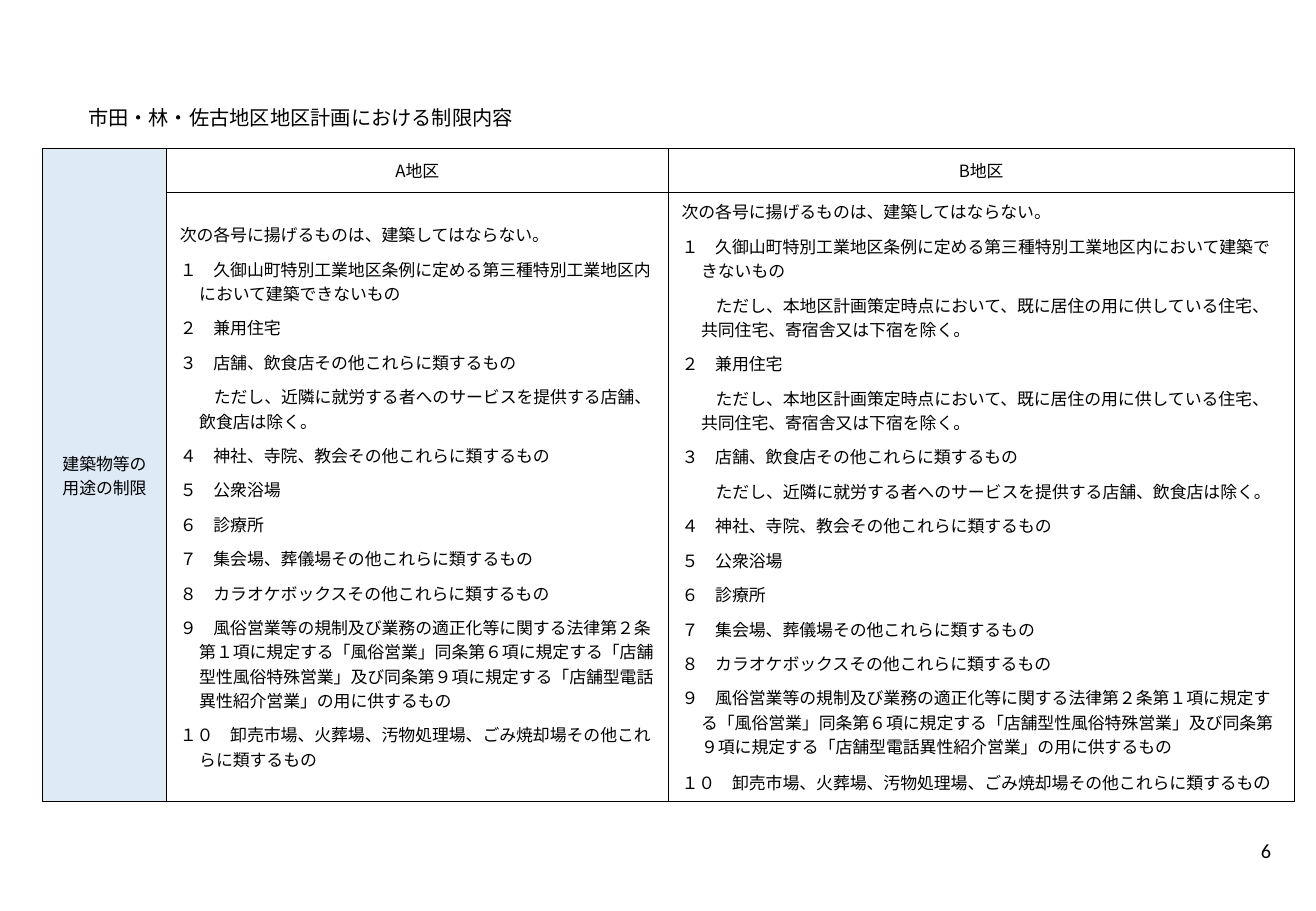
from lxml.etree import SubElement
from pptx import Presentation
from pptx.dml.color import RGBColor as RGB
from pptx.enum.lang import MSO_LANGUAGE_ID as LANG
from pptx.enum.text import MSO_ANCHOR as ANCHOR, MSO_AUTO_SIZE as FIT, PP_ALIGN as ALIGN
from pptx.oxml import parse_xml
from pptx.oxml.ns import nsdecls, qn
from pptx.util import Inches, Pt

COLORS = {"ink": "000000", "head": "DEEBF7", "paper": "FFFFFF"}
CJK = "Noto Sans CJK JP"
HANG = (0.16, -0.16)
NOTE = (0.16, 0.12)

LEAD = "次の各号に揚げるものは、建築してはならない。"
USES = [
    "１　久御山町特別工業地区条例に定める第三種特別工業地区内において建築できないもの",
    "２　兼用住宅",
    "３　店舗、飲食店その他これらに類するもの",
    "４　神社、寺院、教会その他これらに類するもの",
    "５　公衆浴場",
    "６　診療所",
    "７　集会場、葬儀場その他これらに類するもの",
    "８　カラオケボックスその他これらに類するもの",
    "９　風俗営業等の規制及び業務の適正化等に関する法律第２条第１項に規定する「風俗営業」"
    "同条第６項に規定する「店舗型性風俗特殊営業」及び同条第９項に規定する"
    "「店舗型電話異性紹介営業」の用に供するもの",
    "１０　卸売市場、火葬場、汚物処理場、ごみ焼却場その他これらに類するもの",
]
SHOPS = "ただし、近隣に就労する者へのサービスを提供する店舗、飲食店は除く。"
HOMES = "ただし、本地区計画策定時点において、既に居住の用に供している住宅、共同住宅、寄宿舎又は下宿を除く。"
ZONES = [("A地区", {2: SHOPS}), ("B地区", {0: HOMES, 1: HOMES, 2: SHOPS})]


class Page:
    def __init__(self, deck):
        self.slide = deck.slides.add_slide(deck.slide_layouts[5])

    def run(self, para, text, size, face=CJK):
        run = para.add_run()
        run.text = text
        font = run.font
        font.name = face
        font.size = Pt(size)
        font.language_id = LANG.JAPANESE
        font.color.rgb = RGB.from_string(COLORS["ink"])
        SubElement(font._element, qn("a:ea"), typeface=face)
        return run

    def place(self, shape, box, anchor):
        shape.left, shape.top, shape.width, shape.height = map(Inches, box)
        frame = shape.text_frame
        frame.word_wrap = True
        frame.auto_size = FIT.NONE
        frame.vertical_anchor = anchor
        return frame.paragraphs[0]

    def title(self, text, box):
        para = self.place(self.slide.shapes.title, box, ANCHOR.TOP)
        para.alignment = ALIGN.CENTER
        para.line_spacing = 1.5
        self.run(para, text, 12)

    def number(self, text, box):
        shape = self.slide.shapes.add_textbox(*map(Inches, box))
        para = self.place(shape, box, ANCHOR.MIDDLE)
        para.alignment = ALIGN.RIGHT
        self.run(para, text, 12, "Calibri")

    def table(self, box, cols, rows):
        grid = self.slide.shapes.add_table(len(rows), len(cols), *map(Inches, box)).table
        grid.first_row = grid.horz_banding = False
        for col, width in zip(grid.columns, cols):
            col.width = Inches(width)
        for row, height in zip(grid.rows, rows):
            row.height = Inches(height)
        for cell in grid.iter_cells():
            self.style(cell)
        return grid

    def style(self, cell):
        cell.vertical_anchor = ANCHOR.MIDDLE
        cell.margin_left = cell.margin_right = Inches(0.11)
        cell.margin_top = cell.margin_bottom = Inches(0.05)
        self.fill(cell, "paper")
        props = cell._tc.get_or_add_tcPr()
        for spot, side in enumerate("LRTB"):
            props.insert(spot, parse_xml(
                f'<a:ln{side} {nsdecls("a")} w="{Pt(0.5)}"><a:solidFill>'
                f'<a:srgbClr val="{COLORS["ink"]}"/></a:solidFill></a:ln{side}>'))

    def fill(self, cell, color):
        cell.fill.solid()
        cell.fill.fore_color.rgb = RGB.from_string(COLORS[color])

    def lines(self, cell, items, align=ALIGN.LEFT, space=6):
        frame = cell.text_frame
        for spot, (text, (left, first)) in enumerate(items):
            para = frame.add_paragraph() if spot else frame.paragraphs[0]
            para.alignment = align
            para.space_before = Pt(space)
            props = para._p.get_or_add_pPr()
            props.set("marL", str(Inches(left)))
            props.set("indent", str(Inches(first)))
            self.run(para, text, 10)


def rules(notes):
    items = [(LEAD, HANG)]
    for spot, use in enumerate(USES):
        items.append((use, HANG))
        if spot in notes:
            items.append((notes[spot], NOTE))
    return items


def main():
    deck = Presentation()
    deck.slide_width, deck.slide_height = Inches(10.83), Inches(7.5)
    page = Page(deck)
    page.title("市田・林・佐古地区地区計画における制限内容", (0.35, 0.72, 4.25, 0.4))

    grid = page.table((0.35, 1.22, 10.3, 5.38), (1.02, 4.13, 5.15), (0.36, 5.02))
    head = grid.cell(0, 0)
    head.merge(grid.cell(1, 0))
    page.fill(head, "head")
    page.lines(head, [(text, (0, 0)) for text in ("建築物等の", "用途の制限")], ALIGN.CENTER, 0)
    for col, (name, notes) in enumerate(ZONES, 1):
        page.lines(grid.cell(0, col), [(name, (0, 0))], ALIGN.CENTER)
        page.lines(grid.cell(1, col), rules(notes))
    last = grid.cell(1, 2).text_frame.paragraphs[-1]
    last.runs[0].text = USES[-1][:-1]
    page.run(last, USES[-1][-1], 10.5)

    page.number("6", (8.23, 6.8, 2.33, 0.4))
    deck.save("out.pptx")


if __name__ == "__main__":
    main()
